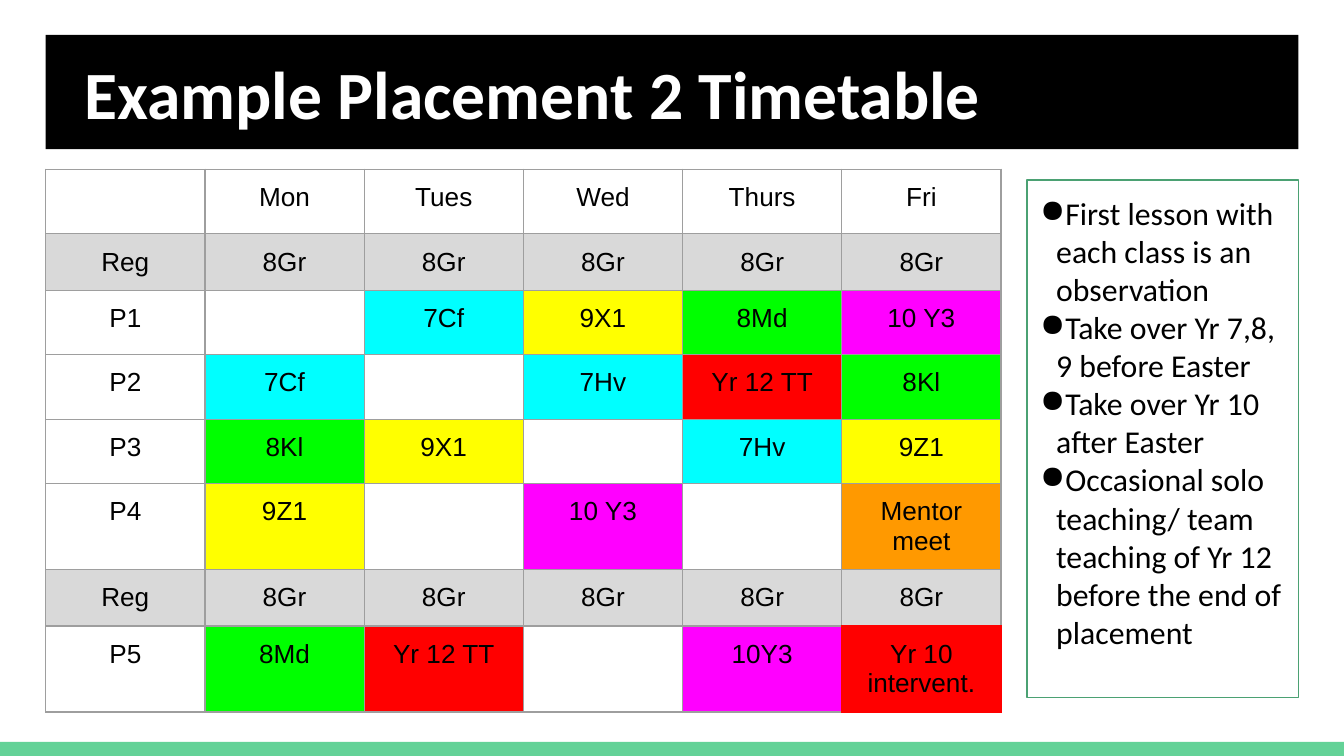
import dataclasses

import lxml.etree
import pptx
import pptx.dml.color
import pptx.enum.shapes
import pptx.enum.text
import pptx.oxml.ns
import pptx.util

Inches = pptx.util.Inches
Pt = pptx.util.Pt
ALIGN = pptx.enum.text.PP_ALIGN
ANCHOR = pptx.enum.text.MSO_ANCHOR
qn = pptx.oxml.ns.qn


@dataclasses.dataclass(frozen=True)
class Theme:
    black: str = "000000"
    white: str = "FFFFFF"
    footer: str = "63D297"
    note_line: str = "4BA173"
    grid: str = "9E9E9E"
    alert: str = "FF0000"
    heading_font: str = "Calibri"
    table_font: str = "Arial"
    title_size: float = 36.2
    note_size: float = 17
    table_size: float = 14
    line_width: float = 0.75
    inset: float = 0.1


# Cell colour follows the start of the lesson name; the first match wins
LESSON_COLOURS = {
    "Reg": "D9D9D9", "8Gr": "D9D9D9", "7": "00FFFF", "8": "00FF00",
    "9": "FFFF00", "10": "FF00FF", "Yr": "FF0000", "Mentor": "FF9900",
}
REGISTRATION = ["Reg"] + ["8Gr"] * 5
TIMETABLE = [
    ["", "Mon", "Tues", "Wed", "Thurs", "Fri"],
    REGISTRATION,
    ["P1", "", "7Cf", "9X1", "8Md", "10 Y3"],
    ["P2", "7Cf", "", "7Hv", "Yr 12 TT", "8Kl"],
    ["P3", "8Kl", "9X1", "", "7Hv", "9Z1"],
    ["P4", "9Z1", "", "10 Y3", "", "Mentor meet"],
    REGISTRATION,
    ["P5", "8Md", "Yr 12 TT", "", "10Y3", "Yr 10 intervent."],
]
ROW_HEIGHTS = [0.48, 0.42, 0.48, 0.48, 0.48, 0.64, 0.42, 0.64]
COLUMN_WIDTH = 1.185
NOTES = [
    "First lesson with each class is an observation",
    "Take over Yr 7,8, 9 before Easter",
    "Take over Yr 10 after Easter",
    "Occasional solo teaching/ team teaching of Yr 12 before the end of placement",
]


def rgb(colour):
    return pptx.dml.color.RGBColor.from_string(colour)


def write(para, text, *, font, size, colour, bold=False, align=ALIGN.LEFT,
          margin=0, indent=0, bullet=None):
    """Put one formatted span of text into a paragraph."""
    para.alignment = align
    span = para.add_run()
    span.text = text
    span.font.name, span.font.size, span.font.bold = font, Pt(size), bold
    span.font.color.rgb = rgb(colour)
    properties = para._p.get_or_add_pPr()
    properties.set("marL", str(Inches(margin)))
    properties.set("indent", str(Inches(indent)))
    if bullet:
        shade = lxml.etree.SubElement(properties, qn("a:buClr"))
        lxml.etree.SubElement(shade, qn("a:srgbClr"), val=colour)
        lxml.etree.SubElement(properties, qn("a:buChar"), char=bullet)


class SlideBuilder:
    def __init__(self, page, theme):
        self.page = page
        self.theme = theme

    def box(self, left, top, width, height, fill, line=None, anchor=ANCHOR.TOP):
        box = self.page.shapes.add_shape(
            pptx.enum.shapes.MSO_SHAPE.RECTANGLE,
            Inches(left), Inches(top), Inches(width), Inches(height))
        box.shadow.inherit = False
        box.fill.solid()
        box.fill.fore_color.rgb = rgb(fill)
        if line:
            box.line.color.rgb = rgb(line)
            box.line.width = Pt(self.theme.line_width)
        else:
            box.line.fill.background()
        frame = box.text_frame
        frame.word_wrap = True
        frame.vertical_anchor = anchor
        frame.margin_left = frame.margin_right = Inches(self.theme.inset)
        frame.margin_top = frame.margin_bottom = Inches(self.theme.inset)
        return box

    def title(self, text, *place):
        theme = self.theme
        box = self.box(*place, fill=theme.black, anchor=ANCHOR.MIDDLE)
        write(box.text_frame.paragraphs[0], text, font=theme.heading_font,
              size=theme.title_size, colour=theme.white, bold=True, indent=0.19)

    def notes(self, items, *place):
        theme = self.theme
        frame = self.box(*place, fill=theme.white, line=theme.note_line).text_frame
        for index, item in enumerate(items):
            para = frame.add_paragraph() if index else frame.paragraphs[0]
            write(para, item, font=theme.heading_font, size=theme.note_size,
                  colour=theme.black, margin=0.12, indent=-0.18, bullet="●")

    def border(self, cell, side, colour):
        line = lxml.etree.SubElement(cell._tc.get_or_add_tcPr(), qn(f"a:ln{side}"),
                                     w=str(Pt(self.theme.line_width)))
        fill = lxml.etree.SubElement(line, qn("a:solidFill"))
        lxml.etree.SubElement(fill, qn("a:srgbClr"), val=colour)

    def cell(self, cell, text, alert_sides):
        theme = self.theme
        for side in "LRTB":
            self.border(cell, side, theme.alert if side in alert_sides else theme.grid)
        cell.fill.solid()
        cell.fill.fore_color.rgb = rgb(next(
            (colour for start, colour in LESSON_COLOURS.items()
             if text.startswith(start)), theme.white))
        # Empty cells need no vertical inset, so they never stretch a row
        cell.margin_top = cell.margin_bottom = Inches(theme.inset if text else 0)
        cell.margin_left = cell.margin_right = Inches(theme.inset)
        if text:
            write(cell.text_frame.paragraphs[0], text, font=theme.table_font,
                  size=theme.table_size, colour=theme.black, align=ALIGN.CENTER)

    def timetable(self, rows, heights, column_width, left, top):
        count = len(rows[0])
        table = self.page.shapes.add_table(
            len(rows), count, Inches(left), Inches(top),
            Inches(column_width * count), Inches(sum(heights))).table
        table.first_row = table.horz_banding = False
        for column in table.columns:
            column.width = Inches(column_width)
        # The last cell is outlined in red, on its neighbours' edges too
        end_row, end_column = len(rows) - 1, count - 1
        alerts = {(end_row, end_column): "LRTB",
                  (end_row - 1, end_column): "B",
                  (end_row, end_column - 1): "R"}
        for row, (texts, height) in enumerate(zip(rows, heights)):
            table.rows[row].height = Inches(height)
            for column, text in enumerate(texts):
                self.cell(table.cell(row, column), text, alerts.get((row, column), ""))


def main():
    deck = pptx.Presentation()
    deck.slide_width, deck.slide_height = Inches(10), Inches(5.625)
    theme = Theme()
    builder = SlideBuilder(deck.slides.add_slide(deck.slide_layouts[6]), theme)

    # Footer band and title bar
    builder.box(0, 5.52, 10, 0.11, fill=theme.footer)
    builder.title("Example Placement 2 Timetable", 0.34, 0.26, 9.32, 0.85)

    # Weekly timetable with notes beside it
    builder.timetable(TIMETABLE, ROW_HEIGHTS, COLUMN_WIDTH, 0.34, 1.26)
    builder.notes(NOTES, 7.64, 1.34, 2.02, 3.85)

    deck.save("out.pptx")


if __name__ == "__main__":
    main()
